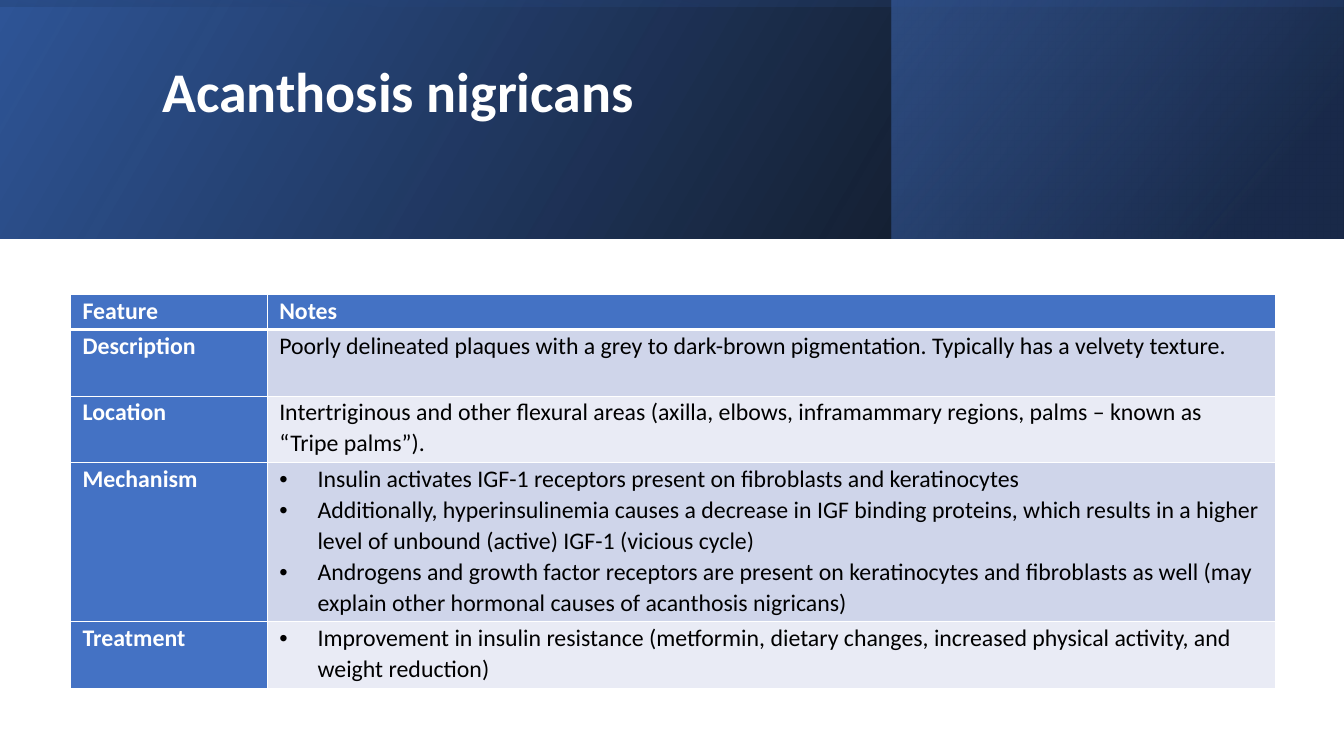
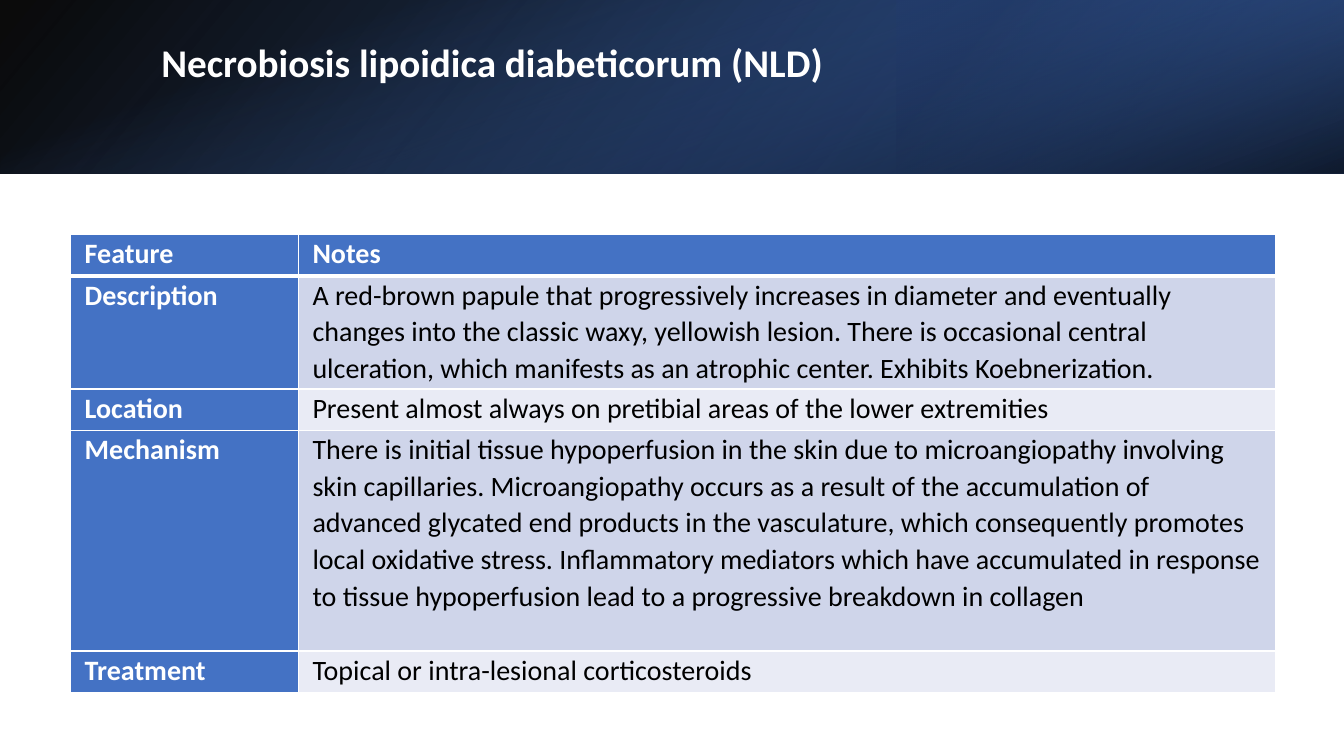
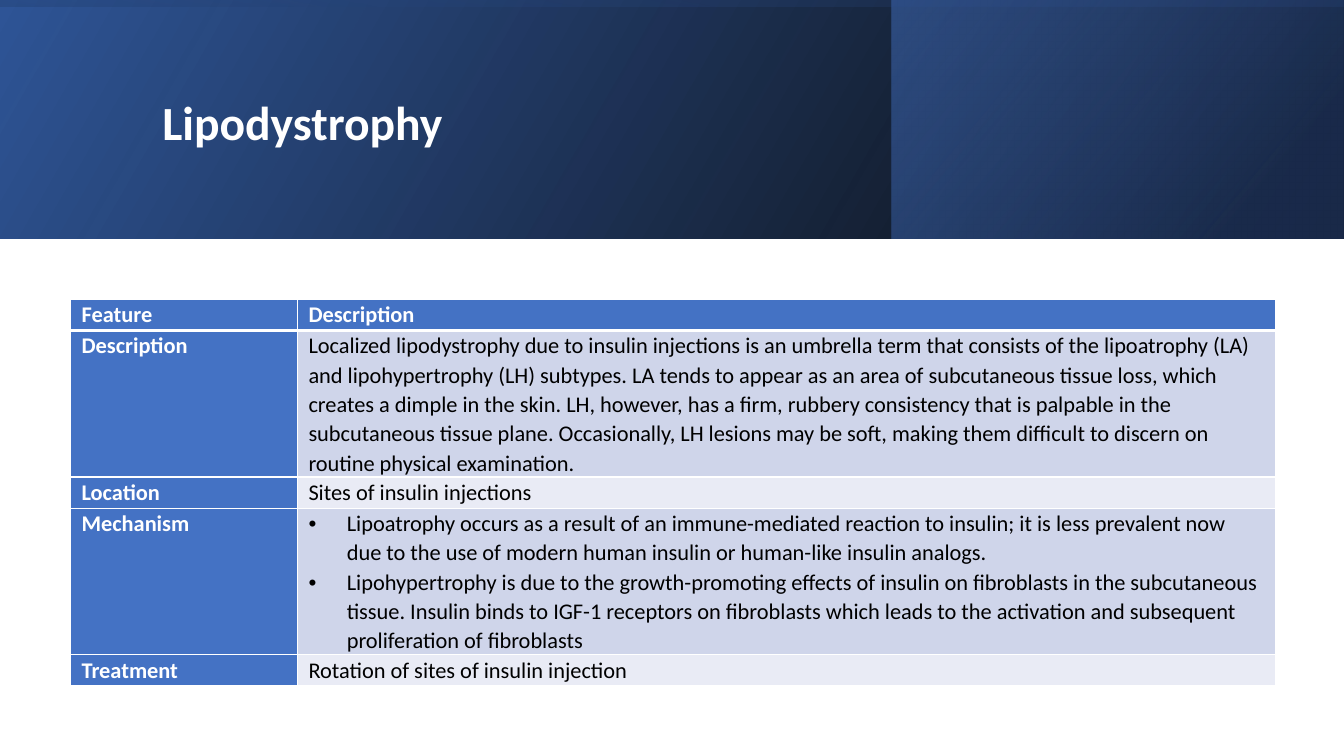
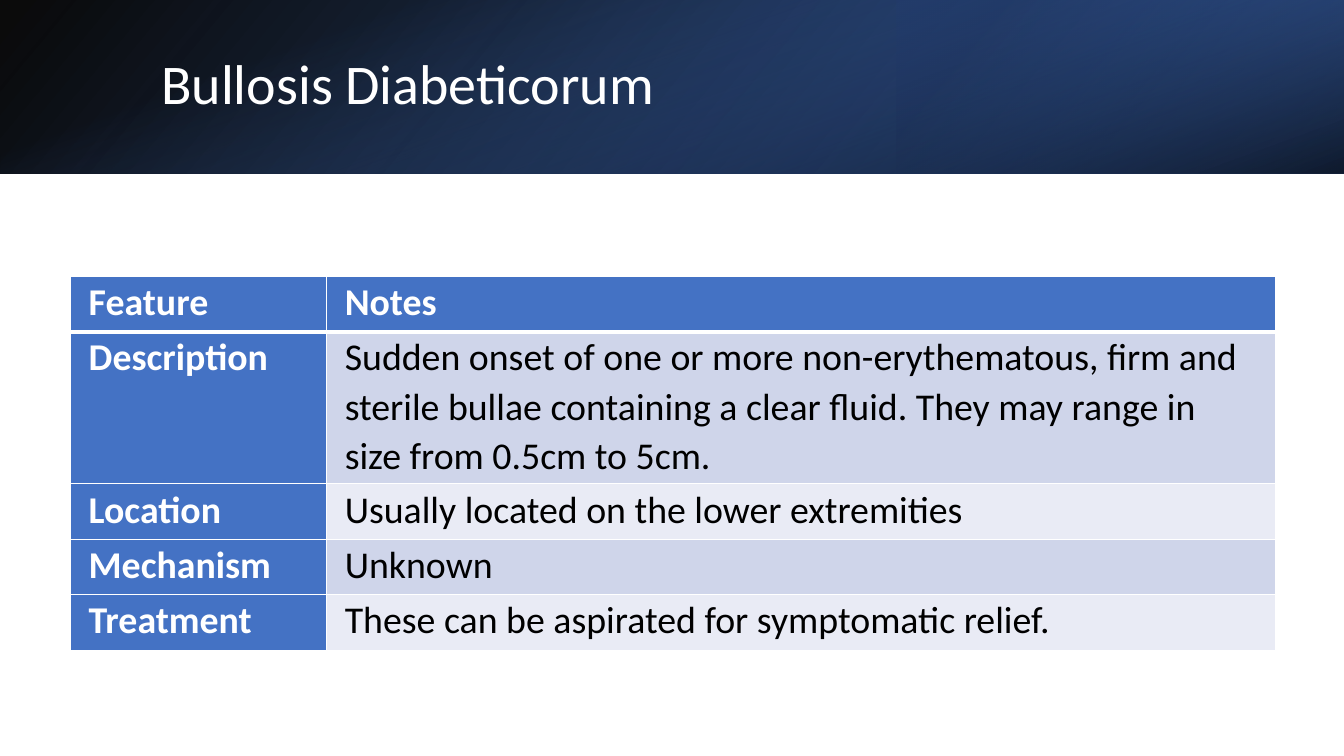
from dataclasses import dataclass

from lxml.etree import SubElement
from pptx import Presentation
from pptx.dml.color import RGBColor
from pptx.enum.shapes import MSO_SHAPE
from pptx.enum.text import MSO_ANCHOR, MSO_AUTO_SIZE, PP_ALIGN
from pptx.oxml.ns import qn
from pptx.slide import Slide
from pptx.table import _Cell
from pptx.text.text import _Paragraph
from pptx.util import Inches, Pt


@dataclass(frozen=True)
class Theme:
    font: str = "Calibri"
    white: str = "FFFFFF"
    black: str = "000000"
    navy: str = "203864"
    deep_blue: str = "2F5597"
    blue: str = "4472C4"
    stripes: tuple[str, str] = ("CFD5EA", "E9EBF5")
    title_large: int = 40
    title_medium: int = 34
    title_small: int = 28
    title_spacing: float = 0.9
    cell_spacing: float = 1.07
    line_factor: float = 1.22
    rule: float = 1
    header_rule: float = 3


@dataclass(frozen=True)
class Box:
    left: float
    top: float
    width: float
    height: float

    def lengths(self) -> tuple[Inches, ...]:
        return tuple(Inches(n) for n in (self.left, self.top, self.width, self.height))


@dataclass(frozen=True)
class Stop:
    position: int
    color: str
    opacity: int = 100


@dataclass(frozen=True)
class Panel:
    box: Box
    stops: tuple[Stop, Stop]
    angle: int
    rotation: int = 0
    flipped: bool = True


@dataclass(frozen=True)
class Header:
    panels: tuple[Panel, ...]
    title_box: Box


@dataclass(frozen=True)
class Bullets:
    items: tuple[str, ...]


@dataclass(frozen=True)
class Topic:
    title: str
    header: Header
    title_size: int
    title_bold: bool
    title_raised: bool
    table_top: float
    label_width: float
    row_heights: tuple[float, ...]
    inset: float
    text_size: int
    heading: str
    notes: tuple[str | Bullets, ...]


THEME = Theme()
PAGE_WIDTH, PAGE_HEIGHT = 13.33, 7.5
TABLE_LEFT, TABLE_WIDTH = 0.7, 11.95
BULLET_INDENT = 0.38
TITLE_INSET = 0.05
LABELS = ("Description", "Location", "Mechanism", "Treatment")


def upright(height: float) -> Box:
    return Box((PAGE_WIDTH - height) / 2, (height - PAGE_WIDTH) / 2, height, PAGE_WIDTH)


def make_header(height: float, base_angle: int, side: Panel, overlay: Panel, title_box: Box) -> Header:
    base_stops = (Stop(0, THEME.black, 96), Stop(100, THEME.deep_blue))
    base = Panel(Box(0, 0, PAGE_WIDTH, height), base_stops, base_angle)
    return Header((base, side, overlay), title_box)


def side_stops(opacity: int) -> tuple[Stop, Stop]:
    return Stop(19, THEME.navy, 68), Stop(100, THEME.blue, opacity)


TALL = make_header(
    2.37,
    330,
    Panel(Box(8.84, 0, 4.48, 2.37), side_stops(48), 320),
    Panel(upright(2.37), (Stop(23, THEME.deep_blue, 16), Stop(99, THEME.black, 45)), 350, 270),
    Box(1.51, 0.38, 10.63, 1.72),
)
SHORT = make_header(
    1.72,
    140,
    Panel(Box(8.89, 0, 4.44, 1.72), side_stops(79), 320, 180),
    Panel(upright(1.72), (Stop(23, THEME.blue, 0), Stop(99, THEME.black, 74)), 340, 90, False),
    Box(1.5, 0.38, 10.98, 0.96),
)

TOPICS = (
    Topic(
        "Acanthosis nigricans", TALL, THEME.title_large, True, True,
        2.92, 1.95, (0.35, 0.66, 0.66, 1.58, 0.66), 0.12, 17, "Notes",
        (
            "Poorly delineated plaques with a grey to dark-brown pigmentation. Typically has a velvety texture.",
            "Intertriginous and other flexural areas (axilla, elbows, inframammary regions, palms – known as "
            "“Tripe palms”).",
            Bullets((
                "Insulin activates IGF-1 receptors present on fibroblasts and keratinocytes",
                "Additionally, hyperinsulinemia causes a decrease in IGF binding proteins, which results in a "
                "higher level of unbound (active) IGF-1 (vicious cycle)",
                "Androgens and growth factor receptors are present on keratinocytes and fibroblasts as well "
                "(may explain other hormonal causes of acanthosis nigricans)",
            )),
            Bullets((
                "Improvement in insulin resistance (metformin, dietary changes, increased physical activity, "
                "and weight reduction)",
            )),
        ),
    ),
    Topic(
        "Necrobiosis lipoidica diabeticorum (NLD)", SHORT, THEME.title_small, True, True,
        2.33, 2.26, (0.41, 1.12, 0.41, 2.19, 0.41), 0.14, 20, "Notes",
        (
            "A red-brown papule that progressively increases in diameter and eventually changes into the "
            "classic waxy, yellowish lesion. There is occasional central ulceration, which manifests as an "
            "atrophic center. Exhibits Koebnerization.",
            "Present almost always on pretibial areas of the lower extremities",
            "There is initial tissue hypoperfusion in the skin due to microangiopathy involving skin "
            "capillaries. Microangiopathy occurs as a result of the accumulation of advanced glycated end "
            "products in the vasculature, which consequently promotes local oxidative stress. Inflammatory "
            "mediators which have accumulated in response to tissue hypoperfusion lead to a progressive "
            "breakdown in collagen",
            "Topical or intra-lesional corticosteroids",
        ),
    ),
    Topic(
        "Lipodystrophy", TALL, THEME.title_medium, True, False,
        2.97, 2.25, (0.31, 1.44, 0.31, 1.44, 0.31), 0.11, 16, "Description",
        (
            "Localized lipodystrophy due to insulin injections is an umbrella term that consists of the "
            "lipoatrophy (LA) and lipohypertrophy (LH) subtypes. LA tends to appear as an area of subcutaneous "
            "tissue loss, which creates a dimple in the skin. LH, however, has a firm, rubbery consistency that "
            "is palpable in the subcutaneous tissue plane. Occasionally, LH lesions may be soft, making them "
            "difficult to discern on routine physical examination.",
            "Sites of insulin injections",
            Bullets((
                "Lipoatrophy occurs as a result of an immune-mediated reaction to insulin; it is less prevalent "
                "now due to the use of modern human insulin or human-like insulin analogs.",
                "Lipohypertrophy is due to the growth-promoting effects of insulin on fibroblasts in the "
                "subcutaneous tissue. Insulin binds to IGF-1 receptors on fibroblasts which leads to the "
                "activation and subsequent proliferation of fibroblasts",
            )),
            "Rotation of sites of insulin injection",
        ),
    ),
    Topic(
        "Bullosis Diabeticorum", SHORT, THEME.title_large, False, False,
        2.74, 2.54, (0.55, 1.51, 0.55, 0.55, 0.55), 0.18, 27, "Notes",
        (
            "Sudden onset of one or more non-erythematous, firm and sterile bullae containing a clear fluid. "
            "They may range in size from 0.5cm to 5cm.",
            "Usually located on the lower extremities",
            "Unknown",
            "These can be aspirated for symptomatic relief.",
        ),
    ),
)


def style_paragraph(para: _Paragraph, size: int, color: str, bold: bool, spacing: float) -> None:
    para.alignment = PP_ALIGN.LEFT
    para.line_spacing = spacing
    for span in para.runs:
        span.font.name = THEME.font
        span.font.size = Pt(size)
        span.font.bold = bold
        span.font.color.rgb = RGBColor.from_string(color)


def add_bullet(para: _Paragraph) -> None:
    properties = para._p.get_or_add_pPr()
    properties.set("marL", str(Inches(BULLET_INDENT)))
    properties.set("indent", str(-Inches(BULLET_INDENT)))
    SubElement(properties, qn("a:buFont"), typeface="Arial")
    SubElement(properties, qn("a:buChar"), char="•")


def add_panel(page: Slide, panel: Panel) -> None:
    shape = page.shapes.add_shape(MSO_SHAPE.RECTANGLE, *panel.box.lengths())
    shape.shadow.inherit = False
    shape.line.fill.background()
    shape.rotation = panel.rotation
    if panel.flipped:
        shape.element.spPr.find(qn("a:xfrm")).set("flipH", "1")
    shape.fill.gradient()
    shape.fill.gradient_angle = 360 - panel.angle
    for gradient_stop, stop in zip(shape.fill.gradient_stops, panel.stops):
        gradient_stop.position = stop.position / 100
        gradient_stop.color.rgb = RGBColor.from_string(stop.color)
    for color, stop in zip(shape.element.spPr.iter(qn("a:srgbClr")), panel.stops):
        if stop.opacity < 100:
            SubElement(color, qn("a:alpha"), val=str(stop.opacity * 1000))


def place_title(page: Slide, topic: Topic) -> None:
    title = page.shapes.title
    title.element.getparent().append(title.element)
    title.left, title.top, title.width, title.height = topic.header.title_box.lengths()
    frame = title.text_frame
    frame.text = topic.title
    frame.word_wrap = True
    frame.auto_size = MSO_AUTO_SIZE.NONE
    frame.vertical_anchor = MSO_ANCHOR.MIDDLE
    line_height = topic.title_size * THEME.line_factor * THEME.title_spacing / 72
    frame.margin_top = Inches(TITLE_INSET)
    frame.margin_bottom = Inches(TITLE_INSET + (line_height if topic.title_raised else 0))
    style_paragraph(frame.paragraphs[0], topic.title_size, THEME.white, topic.title_bold, THEME.title_spacing)


def set_borders(cell: _Cell, top: float, bottom: float) -> None:
    properties = cell._tc.get_or_add_tcPr()
    widths = {"lnL": THEME.rule, "lnR": THEME.rule, "lnT": top, "lnB": bottom}
    for index, (side, width) in enumerate(widths.items()):
        line = properties.makeelement(qn(f"a:{side}"), {"w": str(Pt(width))})
        SubElement(SubElement(line, qn("a:solidFill")), qn("a:srgbClr"), val=THEME.white)
        properties.insert(index, line)


def fill_cell(cell: _Cell, content: str | Bullets, topic: Topic, row: int, emphasised: bool) -> None:
    bulleted = isinstance(content, Bullets)
    cell.text_frame.text = "\n".join(content.items) if bulleted else content
    cell.margin_left = cell.margin_right = Inches(topic.inset)
    cell.margin_top = cell.margin_bottom = 0
    cell.fill.solid()
    background = THEME.blue if emphasised else THEME.stripes[(row - 1) % 2]
    cell.fill.fore_color.rgb = RGBColor.from_string(background)
    set_borders(
        cell,
        THEME.header_rule if row == 1 else THEME.rule,
        THEME.header_rule if row == 0 else THEME.rule,
    )
    color = THEME.white if emphasised else THEME.black
    for para in cell.text_frame.paragraphs:
        style_paragraph(para, topic.text_size, color, emphasised, THEME.cell_spacing)
        if bulleted:
            add_bullet(para)


def add_feature_table(page: Slide, topic: Topic) -> None:
    rows = (("Feature", topic.heading), *zip(LABELS, topic.notes))
    box = Box(TABLE_LEFT, topic.table_top, TABLE_WIDTH, sum(topic.row_heights))
    table = page.shapes.add_table(len(rows), 2, *box.lengths()).table
    for column, width in zip(table.columns, (topic.label_width, TABLE_WIDTH - topic.label_width)):
        column.width = Inches(width)
    for row, (contents, height) in enumerate(zip(rows, topic.row_heights)):
        table.rows[row].height = Inches(height)
        for column, content in enumerate(contents):
            fill_cell(table.cell(row, column), content, topic, row, row == 0 or column == 0)


def main() -> None:
    deck = Presentation()
    deck.slide_width, deck.slide_height = Inches(PAGE_WIDTH), Inches(PAGE_HEIGHT)
    for topic in TOPICS:
        page = deck.slides.add_slide(deck.slide_layouts[5])
        for panel in topic.header.panels:
            add_panel(page, panel)
        place_title(page, topic)
        add_feature_table(page, topic)
    deck.save("out.pptx")


if __name__ == "__main__":
    main()
